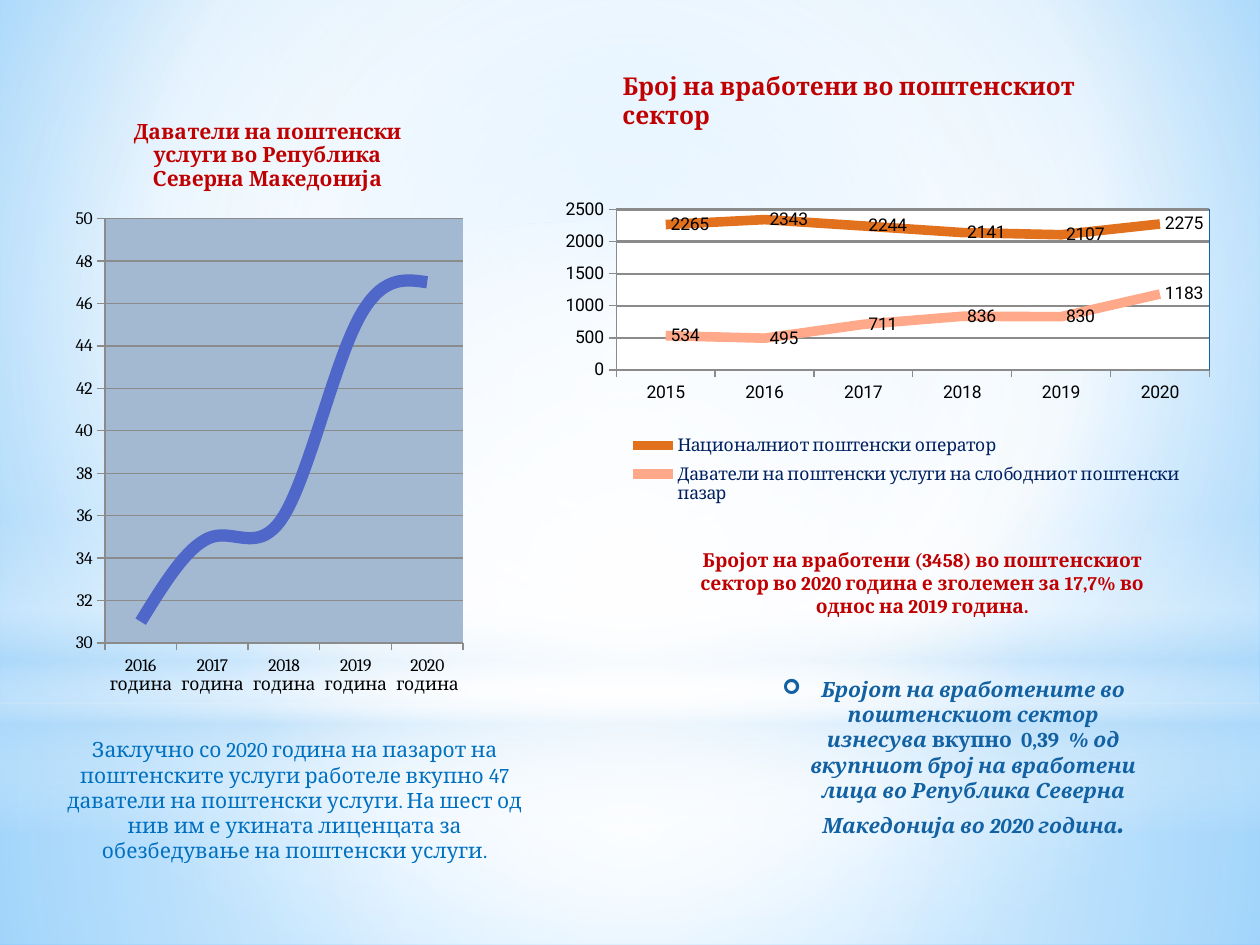
import pptx
import pptx.chart.data
import pptx.dml.color
import pptx.enum.chart
import pptx.enum.shapes
import pptx.enum.text
import pptx.oxml
import pptx.oxml.ns
import pptx.util

RGB = pptx.dml.color.RGBColor
Pt = pptx.util.Pt
qn = pptx.oxml.ns.qn

WIDTH, HEIGHT = pptx.util.Inches(10), pptx.util.Inches(7.5)
BLACK = RGB(0x00, 0x00, 0x00)
GRID_GRAY = RGB(0x8B, 0x8B, 0x8B)
RED = RGB(0xC0, 0x00, 0x00)
SKY_BLUE = RGB(0x00, 0x70, 0xC0)
DEEP_BLUE = RGB(0x11, 0x61, 0xA3)
NAVY = RGB(0x00, 0x20, 0x60)
INDIGO = RGB(0x4E, 0x67, 0xC8)
ORANGE = RGB(0xE2, 0x71, 0x1D)
SALMON = RGB(0xFF, 0xA9, 0x8A)
STEEL = RGB(0xA3, 0xB8, 0xD1)
WHITE = RGB(0xFF, 0xFF, 0xFF)
PALE_BLUE = RGB(0xB4, 0xDC, 0xFA)
BG_INNER = RGB(0x9E, 0xD5, 0xFF)
BG_OUTER = RGB(0x5B, 0xB9, 0xFF)

CENTER = pptx.enum.text.PP_ALIGN.CENTER
RECTANGLE = pptx.enum.shapes.MSO_SHAPE.RECTANGLE
OVAL = pptx.enum.shapes.MSO_SHAPE.OVAL
NAMESPACES = pptx.oxml.ns.nsdecls("a", "c")


def place(left, top, width, height):
    """Turn percentages of the slide's size into lengths."""
    return [int(whole * share / 100) for whole, share in
            ((WIDTH, left), (HEIGHT, top), (WIDTH, width), (HEIGHT, height))]


def style(font, color, **values):
    for name, value in values.items():
        setattr(font, name, value)
    font.color.rgb = color


def gradient(stops, focus=None):
    """Gradient fill from (position, colour, opacity); without focus it runs downwards."""
    marks = "".join(
        f'<a:gs pos="{position * 1000}"><a:srgbClr val="{color}">'
        f'<a:alpha val="{opacity * 1000}"/></a:srgbClr></a:gs>'
        for position, color, opacity in stops)
    if focus:
        sides = " ".join(f'{side}="{share * 1000}"' for side, share in zip("ltrb", focus))
        course = f'<a:path path="circle"><a:fillToRect {sides}/></a:path>'
    else:
        course = '<a:lin ang="5400000" scaled="0"/>'
    return pptx.oxml.parse_xml(
        f'<a:gradFill {NAMESPACES} rotWithShape="1"><a:gsLst>{marks}</a:gsLst>{course}</a:gradFill>')


def swap_solid(holder, fill):
    holder.replace(holder.find(qn("a:solidFill")), fill)


def add_glow(slide, kind, box, fill):
    glow = slide.shapes.add_shape(kind, *place(*box))
    glow.shadow.inherit = False
    glow.line.fill.background()
    glow.fill.solid()
    swap_solid(glow._element.spPr, fill)


def add_backdrop(slide):
    slide.background.fill.solid()
    swap_solid(slide.element.find(".//" + qn("p:bgPr")), gradient(
        [(0, BG_INNER, 100), (60, WHITE, 100), (100, BG_OUTER, 100)], (20, 10, 20, 60)))
    middle = (50, 50, 50, 50)
    glows = [
        (RECTANGLE, (0, 74.4, 100, 25.6),
         [(0, WHITE, 91), (37, WHITE, 76), (100, PALE_BLUE, 79)], middle),
        (RECTANGLE, (0, 0, 100, 74.4),
         [(0, WHITE, 89), (48, WHITE, 62), (100, PALE_BLUE, 79)], middle),
        (RECTANGLE, (0, 54.93, 100, 33.33),
         [(0, WHITE, 0), (29, WHITE, 30), (45, PALE_BLUE, 40), (55, WHITE, 26),
          (65, PALE_BLUE, 60), (100, WHITE, 0)], None),
        (OVAL, (0, 23.33, 100, 74.4), [(0, WHITE, 100), (56, WHITE, 0)], middle),
    ]
    for kind, box, stops, focus in glows:
        add_glow(slide, kind, box, gradient(stops, focus))


def set_layout(part, index, shares, inner=False):
    """Fix the place of a chart part as shares of the chart."""
    for old in part.findall(qn("c:layout")):
        part.remove(old)
    target = '<c:layoutTarget val="inner"/>' if inner else ""
    modes = '<c:xMode val="edge"/><c:yMode val="edge"/>'
    sizes = "".join(f'<c:{key} val="{share}"/>' for key, share in zip("xywh", shares))
    part.insert(index, pptx.oxml.parse_xml(
        f"<c:layout {NAMESPACES}><c:manualLayout>{target}{modes}{sizes}"
        "</c:manualLayout></c:layout>"))


def add_line_chart(slide, box, categories, rows, plot, plot_fill, border, axis_font, width, smooth):
    """Rows are (name, values, colour)."""
    data = pptx.chart.data.CategoryChartData()
    data.categories = categories
    for name, values, _ in rows:
        data.add_series(name, values)
    chart = slide.shapes.add_chart(
        pptx.enum.chart.XL_CHART_TYPE.LINE, *place(*box), data).chart
    chart.has_title = chart.has_legend = False
    style(chart.font, BLACK, name="Roboto", size=Pt(10))
    chart.plots[0].vary_by_categories = False
    for series, (_, _, color) in zip(chart.plots[0].series, rows):
        series.smooth = smooth
        series.format.line.width = Pt(width)
        series.format.line.color.rgb = color
    for axis in (chart.category_axis, chart.value_axis):
        style(axis.tick_labels.font, BLACK, name=axis_font, size=Pt(10))
        axis.major_tick_mark = pptx.enum.chart.XL_TICK_MARK.OUTSIDE
        axis.format.line.color.rgb = GRID_GRAY
    chart.value_axis.has_major_gridlines = True
    chart.value_axis.major_gridlines.format.line.color.rgb = GRID_GRAY
    area = chart._chartSpace.find(".//" + qn("c:plotArea"))
    set_layout(area, 0, plot, inner=True)
    edge = f'<a:solidFill><a:srgbClr val="{border}"/></a:solidFill>' if border else "<a:noFill/>"
    area.append(pptx.oxml.parse_xml(
        f'<c:spPr {NAMESPACES}><a:solidFill><a:srgbClr val="{plot_fill}"/></a:solidFill>'
        f"<a:ln>{edge}</a:ln></c:spPr>"))
    return chart


def add_providers_chart(slide):
    heading = "Даватели на поштенски услуги во Република Северна Македонија"
    chart = add_line_chart(
        slide, (5.1, 10.13, 32.3, 65.07), [f"{year} година" for year in range(2016, 2021)],
        [(heading, (31, 35, 36, 45, 47), INDIGO)],
        (0.1, 0.2, 0.88, 0.69), STEEL, None, "Cambria", 7, True)
    chart.has_title = True
    chart.chart_title.include_in_layout = False
    chart.chart_title.text_frame.text = heading
    style(chart.chart_title.text_frame.paragraphs[0].runs[0].font, RED,
          name="Cambria", size=Pt(12), bold=True)
    axis = chart.value_axis
    axis.minimum_scale, axis.maximum_scale, axis.major_unit = 30, 50, 2


def add_staff_chart(slide):
    chart = add_line_chart(
        slide, (44.1, 20.67, 53.5, 37.73), [str(year) for year in range(2015, 2021)],
        [("Националниот поштенски оператор", (2265, 2343, 2244, 2141, 2107, 2275), ORANGE),
         ("Даватели на поштенски услуги на слободниот поштенски пазар",
          (534, 495, 711, 836, 830, 1183), SALMON)],
        (0.09, 0.04, 0.88, 0.45), WHITE, DEEP_BLUE, "Roboto", 5.5, False)
    chart.value_axis.major_gridlines.format.line.width = Pt(1.25)
    axis = chart.value_axis
    axis.minimum_scale, axis.maximum_scale, axis.major_unit = 0, 2500, 500
    for series in chart.plots[0].series:
        labels = series.data_labels
        labels.show_value = True
        labels.position = pptx.enum.chart.XL_LABEL_POSITION.RIGHT
        style(labels.font, BLACK, name="Roboto", size=Pt(10))
    chart.has_legend = True
    legend = chart.legend
    legend.position = pptx.enum.chart.XL_LEGEND_POSITION.BOTTOM
    legend.include_in_layout = False
    style(legend.font, NAVY, name="Cambria", size=Pt(10))
    set_layout(legend._element, 1, (0.09, 0.65, 0.86, 0.24))


def add_note(slide, box, color, size, runs, **look):
    """Centred text; runs are (text, values that differ from the look)."""
    frame = slide.shapes.add_textbox(*place(*box)).text_frame
    frame.word_wrap = True
    paragraph = frame.paragraphs[0]
    paragraph.alignment = CENTER
    for text, changes in runs:
        run = paragraph.add_run()
        run.text = text
        style(run.font, color, **{"name": "Cambria", "size": Pt(size), **look, **changes})
    return paragraph


def add_arrow_bullet(paragraph):
    properties = paragraph._p.get_or_add_pPr()
    indent = pptx.util.Inches(0.31)
    for name, value in {"marL": indent, "indent": -indent}.items():
        properties.set(name, str(value))
    for tag in ('<a:buFont {} typeface="Wingdings"/>', '<a:buChar {} char="➢"/>'):
        properties.append(pptx.oxml.parse_xml(tag.format(NAMESPACES)))


def set_title(slide, text):
    title = slide.shapes.title
    title.left, title.top, title.width, title.height = place(48.4, 8, 44.9, 5.2)
    frame = title.text_frame
    frame.text = text
    frame.word_wrap = True
    frame.auto_size = pptx.enum.text.MSO_AUTO_SIZE.NONE
    frame.vertical_anchor = pptx.enum.text.MSO_ANCHOR.MIDDLE
    frame.paragraphs[0].alignment = pptx.enum.text.PP_ALIGN.LEFT
    style(frame.paragraphs[0].runs[0].font, RED, name="Cambria", size=Pt(14), bold=True)
    slide.shapes._spTree.append(title._element)  # in front of the backdrop


def main():
    deck = pptx.Presentation()
    deck.slide_width, deck.slide_height = WIDTH, HEIGHT
    slide = deck.slides.add_slide(deck.slide_layouts[5])
    add_backdrop(slide)
    add_providers_chart(slide)
    add_note(slide, (4.3, 77.33, 38.2, 14.8), SKY_BLUE, 12, [
        ("Заклучно со 2020 година на пазарот на поштенските услуги работеле вкупно 47 "
         "даватели на поштенски услуги. На шест од нив им е укината лиценцата за "
         "обезбедување на поштенски услуги.", {})])
    add_staff_chart(slide)
    set_title(slide, "Број на вработени во поштенскиот сектор")
    share_note = add_note(slide, (60.2, 70.93, 31, 18.8), DEEP_BLUE, 12, [
        ("Бројот на вработените во поштенскиот сектор изнесува ", {}),
        ("вкупно  0,39  ", {"italic": False}),
        ("% од вкупниот број на вработени лица во Република Северна Македонија "
         "во 2020 година", {}),
        (".", {"size": Pt(18)})], bold=True, italic=True)
    add_arrow_bullet(share_note)
    add_note(slide, (53.5, 57.33, 39.4, 8.8), RED, 11, [
        ("Бројот на вработени (3458) во поштенскиот сектор во 2020 година е зголемен "
         "за 17,7% во однос на 2019 година.", {})], bold=True)
    deck.save("out.pptx")


if __name__ == "__main__":
    main()
